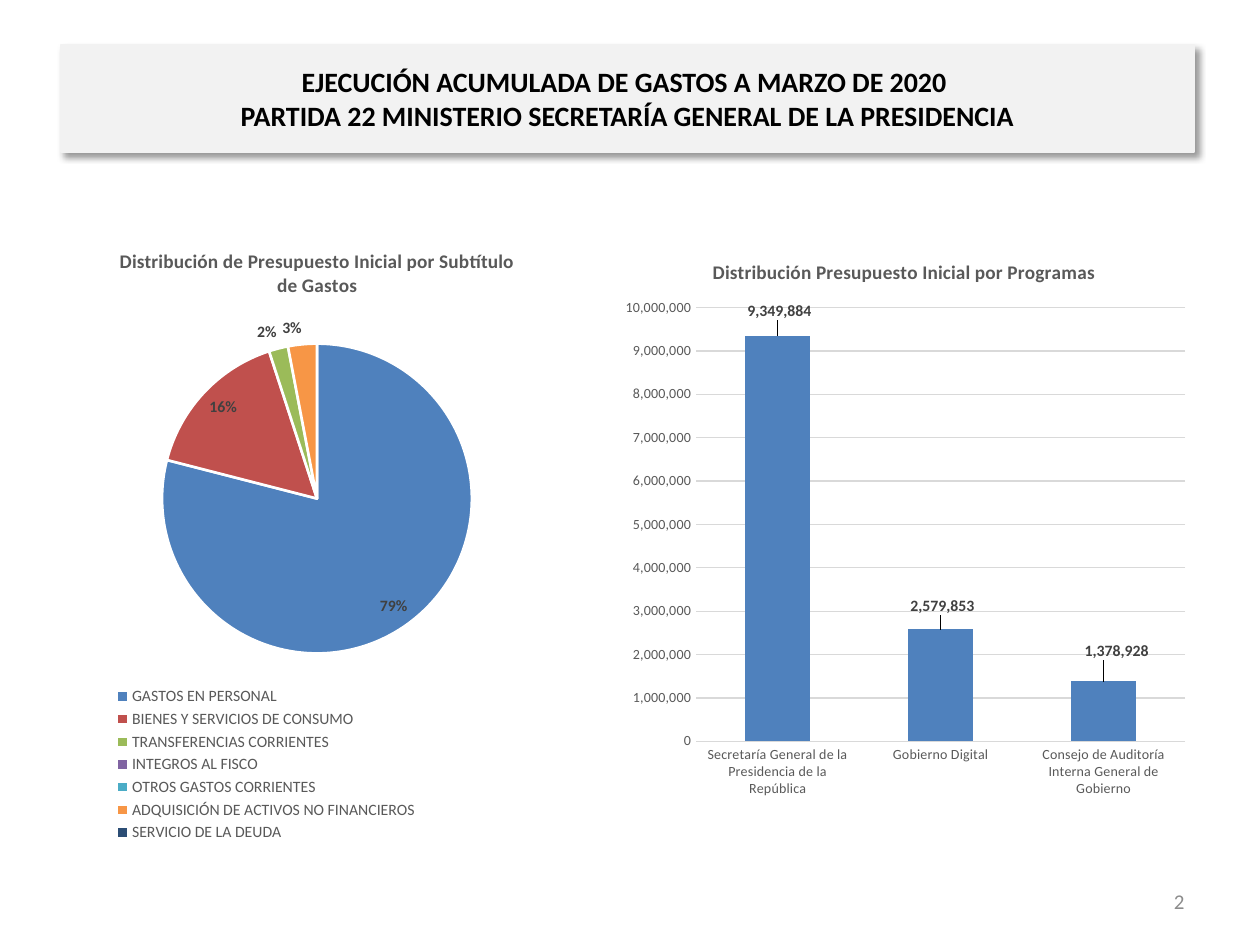
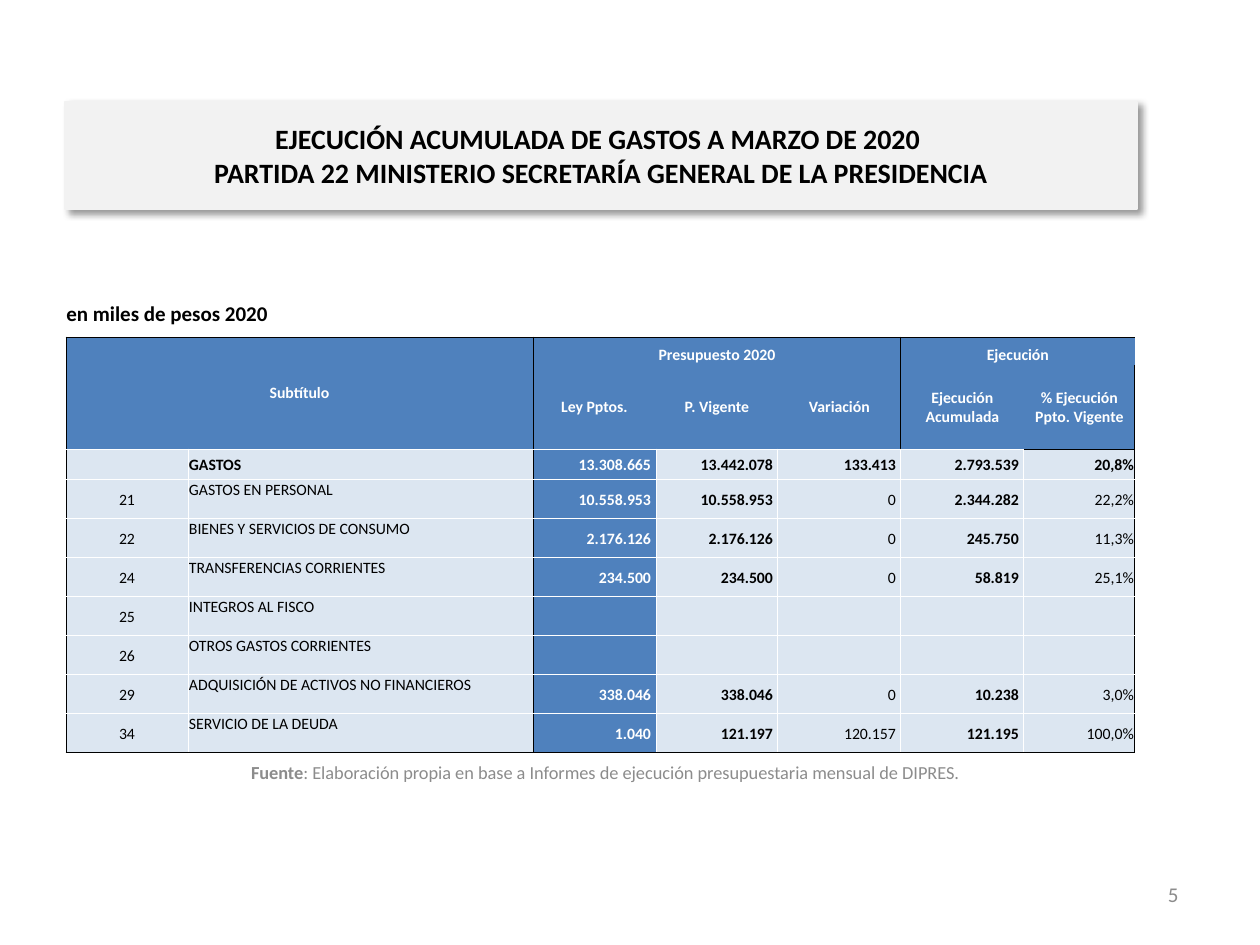
from lxml.etree import SubElement
from pptx import Presentation
from pptx.chart.data import CategoryChartData
from pptx.dml.color import RGBColor
from pptx.enum.chart import XL_CHART_TYPE, XL_LABEL_POSITION, XL_LEGEND_POSITION, XL_TICK_MARK
from pptx.enum.shapes import MSO_SHAPE
from pptx.enum.text import MSO_ANCHOR, PP_ALIGN
from pptx.oxml.ns import qn
from pptx.util import Pt

FONT = "Calibri"
EMU_PER_PX = 914400 / 126
COLORS = {
    "black": "000000", "white": "FFFFFF", "band": "F2F2F2", "blue": "4F81BD",
    "pale": "DCE6F1", "footer": "8C8C8C", "chart_text": "595959",
    "label": "404040", "grid": "D9D9D9", "red": "C0504D", "green": "9BBB59",
    "purple": "8064A2", "teal": "4BACC6", "orange": "F79646", "navy": "2C4D75",
}
SLICE_COLORS = ["blue", "red", "green", "purple", "teal", "orange", "navy"]
TITLE_LINES = ["EJECUCIÓN ACUMULADA DE GASTOS A MARZO DE 2020 ",
               "PARTIDA 22 MINISTERIO SECRETARÍA GENERAL DE LA PRESIDENCIA"]
SUBTITLES = ["GASTOS EN PERSONAL", "BIENES Y SERVICIOS DE CONSUMO",
             "TRANSFERENCIAS CORRIENTES", "INTEGROS AL FISCO",
             "OTROS GASTOS CORRIENTES", "ADQUISICIÓN DE ACTIVOS NO FINANCIEROS",
             "SERVICIO DE LA DEUDA"]
SHARES = [79, 16, 2, None, None, 3, 0]
PROGRAMS = {
    "Secretaría General de la Presidencia de la República": 9349884,
    "Gobierno Digital": 2579853,
    "Consejo de Auditoría Interna General de Gobierno": 1378928,
}
CODES = ["21", "22", "24", "25", "26", "29", "34"]
TOTALS = ["13.308.665", "13.442.078", "133.413", "2.793.539", "20,8%"]
BLANKS = [""] * 5
AMOUNTS = [
    ["10.558.953", "10.558.953", "0", "2.344.282", "22,2%"],
    ["2.176.126", "2.176.126", "0", "245.750", "11,3%"],
    ["234.500", "234.500", "0", "58.819", "25,1%"],
    BLANKS,
    BLANKS,
    ["338.046", "338.046", "0", "10.238", "3,0%"],
    ["1.040", "121.197", "120.157", "121.195", "100,0%"],
]
HEADERS = [["Subtítulo", "", "Presupuesto 2020", "", "", "Ejecución", ""],
           ["", "", "Ley Pptos.", "P. Vigente", "Variación",
            "Ejecución Acumulada", "% Ejecución Ppto. Vigente"]]
COLUMN_WIDTHS = [122, 345, 123, 122, 123, 123, 111]
ROW_HEIGHTS = [28, 84, 31] + [39] * 7


def px(length):
    return round(length * EMU_PER_PX)


def rgb(name):
    return RGBColor.from_string(COLORS[name])


def style_font(font, size, color, bold=False):
    font.name = FONT
    font.size = Pt(size)
    font.bold = bold
    font.color.rgb = rgb(color)


def write(text_frame, lines, size=9, color="black", bold=False,
          align=PP_ALIGN.LEFT, anchor=MSO_ANCHOR.MIDDLE):
    text_frame.word_wrap = True
    text_frame.vertical_anchor = anchor
    for index, line in enumerate(lines):
        paragraph = text_frame.add_paragraph() if index else text_frame.paragraphs[0]
        paragraph.alignment = align
        runs = [(line, bold)] if isinstance(line, str) else line
        for text, run_bold in runs:
            if text:
                run = paragraph.add_run()
                run.text = text
                style_font(run.font, size, color, run_bold)
            else:
                SubElement(paragraph._p, qn("a:endParaRPr"), sz=str(size * 100))


def add_text(slide, left, top, width, height, lines, **text_format):
    box = slide.shapes.add_textbox(px(left), px(top), px(width), px(height))
    write(box.text_frame, lines, **text_format)


def add_page_number(slide, left, top, number):
    add_text(slide, left, top, 294, 50, [number], size=12, color="footer",
             align=PP_ALIGN.RIGHT)


def add_title_band(slide, left, top, width):
    band = slide.shapes.add_shape(MSO_SHAPE.RECTANGLE, px(left), px(top), px(width), px(107))
    band.fill.solid()
    band.fill.fore_color.rgb = rgb("band")
    band.line.color.rgb = rgb("band")
    band.line.width = Pt(0.75)
    band.shadow.inherit = False
    effects = band.element.spPr.find(qn("a:effectLst"))
    shadow = SubElement(effects, qn("a:outerShdw"), blurRad=str(Pt(4)), dist=str(Pt(3)),
                        dir="2700000", algn="tl", rotWithShape="0")
    color = SubElement(shadow, qn("a:srgbClr"), val=COLORS["black"])
    SubElement(color, qn("a:alpha"), val="40000")
    write(band.text_frame, TITLE_LINES, size=16, bold=True, align=PP_ALIGN.CENTER)


def set_layout(element, index, edge=True, inner=False, **fractions):
    for previous in element.findall(qn("c:layout")):
        element.remove(previous)
    layout = SubElement(element, qn("c:layout"))
    manual = SubElement(layout, qn("c:manualLayout"))
    if inner:
        SubElement(manual, qn("c:layoutTarget"), val="inner")
    if edge:
        for mode in ("xMode", "yMode"):
            SubElement(manual, qn(f"c:{mode}"), val="edge")
    for name, value in fractions.items():
        SubElement(manual, qn(f"c:{name}"), val=f"{value:.3f}")
    element.insert(index, layout)


def add_chart(slide, kind, left, top, width, height, categories, values, title, title_at, plot_box):
    data = CategoryChartData(number_format="#,##0")
    data.categories = categories
    data.add_series("Series 1", values)
    chart = slide.shapes.add_chart(kind, px(left), px(top), px(width), px(height), data).chart
    style_font(chart.font, 10, "chart_text")
    chart.has_legend = False
    frame = chart.chart_title.text_frame
    write(frame, title, size=11, color="chart_text", bold=True, align=PP_ALIGN.CENTER)
    set_layout(chart.chart_title._element, 1, x=title_at[0] / width, y=title_at[1] / height)
    x, y, w, h = plot_box
    set_layout(chart.element.find(".//" + qn("c:plotArea")), 0, inner=True,
               x=x / width, y=y / height, w=w / width, h=h / height)
    chart.plots[0].vary_by_categories = kind == XL_CHART_TYPE.PIE
    return chart


def add_expense_pie(slide):
    chart = add_chart(slide, XL_CHART_TYPE.PIE, 63, 220, 508, 629, SUBTITLES, SHARES,
                      ["Distribución de Presupuesto Inicial por Subtítulo", "de Gastos"],
                      (53, 24), (99, 123, 310, 311))
    series = chart.plots[0].series[0]
    labels = series.data_labels
    labels.show_percentage = True
    labels.show_value = False
    labels.number_format = "0%"
    labels.number_format_is_linked = False
    labels.position = XL_LABEL_POSITION.INSIDE_END
    style_font(labels.font, 9, "label", True)
    for index, color in enumerate(SLICE_COLORS):
        point = series.points[index]
        point.format.fill.solid()
        point.format.fill.fore_color.rgb = rgb(color)
        point.format.line.color.rgb = rgb("white")
        point.format.line.width = Pt(1.5)
        share = SHARES[index]
        if share is not None and share < 10:
            label = point.data_label
            style_font(label.font, 9, "label", True)
            label.position = XL_LABEL_POSITION.OUTSIDE_END
    for label in chart.element.iter(qn("c:dLbl")):
        label.find(qn("c:showVal")).set("val", "0")
        label.find(qn("c:showPercent")).set("val", "1")
    chart.has_legend = True
    legend = chart.legend
    legend.position = XL_LEGEND_POSITION.BOTTOM
    legend.include_in_layout = False
    style_font(legend.font, 9, "chart_text")
    set_layout(legend._element, 1, x=0.05, y=0.736, w=0.7, h=0.26)


def add_program_columns(slide):
    width, height = 587, 576
    chart = add_chart(slide, XL_CHART_TYPE.COLUMN_CLUSTERED, 610, 234, width, height,
                      list(PROGRAMS), list(PROGRAMS.values()),
                      ["Distribución Presupuesto Inicial por Programas"],
                      (99, 22), (86, 74, 489, 434))
    plot = chart.plots[0]
    plot.gap_width = 150
    series = plot.series[0]
    series.format.fill.solid()
    series.format.fill.fore_color.rgb = rgb("blue")
    labels = series.data_labels
    labels.show_value = True
    labels.position = XL_LABEL_POSITION.OUTSIDE_END
    style_font(labels.font, 9, "label", True)
    for index in range(len(PROGRAMS)):
        label = series.points[index].data_label
        style_font(label.font, 9, "label", True)
        label.position = XL_LABEL_POSITION.OUTSIDE_END
    label_shifts = [(2, -11), (2, -9), (13, -16)]
    for label, (dx, dy) in zip(chart.element.iter(qn("c:dLbl")), label_shifts):
        set_layout(label, 1, edge=False, x=dx / width, y=dy / height)
    value_axis = chart.value_axis
    for axis in (chart.category_axis, value_axis):
        axis.major_tick_mark = XL_TICK_MARK.NONE
        axis.minor_tick_mark = XL_TICK_MARK.NONE
        axis.format.line.fill.background()
        style_font(axis.tick_labels.font, 8, "chart_text")
    value_axis.minimum_scale = 0
    value_axis.maximum_scale = 10000000
    value_axis.major_unit = 1000000
    value_axis.tick_labels.number_format = "#,##0"
    value_axis.tick_labels.number_format_is_linked = False
    value_axis.major_gridlines.format.line.color.rgb = rgb("grid")
    value_axis.major_gridlines.format.line.width = Pt(0.75)


def vertical_border(row, line):
    if line in (0, 2, 7) or (row < 2 and line == 5):
        return "black"
    return None if row < 2 else "white"


def horizontal_border(line, column):
    if line in (0, len(ROW_HEIGHTS)) or (line == 2 and column == 6):
        return "black"
    return None if line == 1 else "white"


def set_borders(cell, row, column):
    borders = {"lnL": vertical_border(row, column), "lnR": vertical_border(row, column + 1),
               "lnT": horizontal_border(row, column), "lnB": horizontal_border(row + 1, column)}
    properties = cell._tc.get_or_add_tcPr()
    for side, color in borders.items():
        line = SubElement(properties, qn(f"a:{side}"), w=str(Pt(0.5)))
        if color:
            fill = SubElement(line, qn("a:solidFill"))
            SubElement(fill, qn("a:srgbClr"), val=COLORS[color])
        else:
            SubElement(line, qn("a:noFill"))


def cell_format(row, column):
    if row < 2:
        top_group = row == 0 and column > 1
        return {"color": "white", "bold": True, "align": PP_ALIGN.CENTER,
                "anchor": MSO_ANCHOR.BOTTOM if top_group else MSO_ANCHOR.MIDDLE}
    alignments = {0: PP_ALIGN.CENTER, 1: PP_ALIGN.JUSTIFY}
    return {"color": "white" if column == 2 else "black",
            "bold": row == 2 or column in (2, 3, 5),
            "align": alignments.get(column, PP_ALIGN.RIGHT),
            "anchor": MSO_ANCHOR.TOP if column == 1 and row > 2 else MSO_ANCHOR.MIDDLE}


def fill_cell(cell, text, row, column):
    text_format = cell_format(row, column)
    cell.vertical_anchor = text_format.pop("anchor")
    cell.margin_left = cell.margin_top = px(1)
    cell.margin_right = px(5 if row > 1 and 2 <= column <= 5 else 1)
    cell.margin_bottom = 0
    set_borders(cell, row, column)
    cell.fill.solid()
    cell.fill.fore_color.rgb = rgb("blue" if row < 2 or column == 2 else "pale")
    write(cell.text_frame, [text], anchor=None, **text_format)


def add_budget_table(slide):
    rows = HEADERS + [["", "GASTOS"] + TOTALS]
    rows += [[code, name] + amounts for code, name, amounts in zip(CODES, SUBTITLES, AMOUNTS)]
    table = slide.shapes.add_table(len(rows), len(COLUMN_WIDTHS), px(66), px(337),
                                   px(sum(COLUMN_WIDTHS)), px(sum(ROW_HEIGHTS))).table
    table.first_row = False
    table.horz_banding = False
    for column, width in zip(table.columns, COLUMN_WIDTHS):
        column.width = px(width)
    for row, height in zip(table.rows, ROW_HEIGHTS):
        row.height = px(height)
    for row, texts in enumerate(rows):
        for column, text in enumerate(texts):
            fill_cell(table.cell(row, column), text, row, column)
    for first, last in [((0, 0), (1, 1)), ((0, 2), (0, 4)), ((0, 5), (0, 6))]:
        table.cell(*first).merge(table.cell(*last))


def main():
    presentation = Presentation()
    presentation.slide_width = px(1260)
    presentation.slide_height = px(945)
    blank = presentation.slide_layouts[6]

    distribution = presentation.slides.add_slide(blank)
    add_page_number(distribution, 903, 876, "2")
    add_title_band(distribution, 61, 45, 1133)
    add_expense_pie(distribution)
    add_program_columns(distribution)

    execution = presentation.slides.add_slide(blank)
    add_title_band(execution, 65, 102, 1072)
    source = [("Fuente", True),
              (": Elaboración propia en base a Informes de ejecución presupuestaria "
               "mensual de DIPRES.", False)]
    add_text(execution, 65, 747, 1081, 50, [source], size=10.5, color="footer",
             align=PP_ALIGN.CENTER)
    add_page_number(execution, 897, 869, "5")
    add_text(execution, 54, 294, 1081, 44, ["en miles de pesos 2020"], size=12, bold=True,
             anchor=MSO_ANCHOR.TOP)
    add_budget_table(execution)

    presentation.save("out.pptx")


if __name__ == "__main__":
    main()
